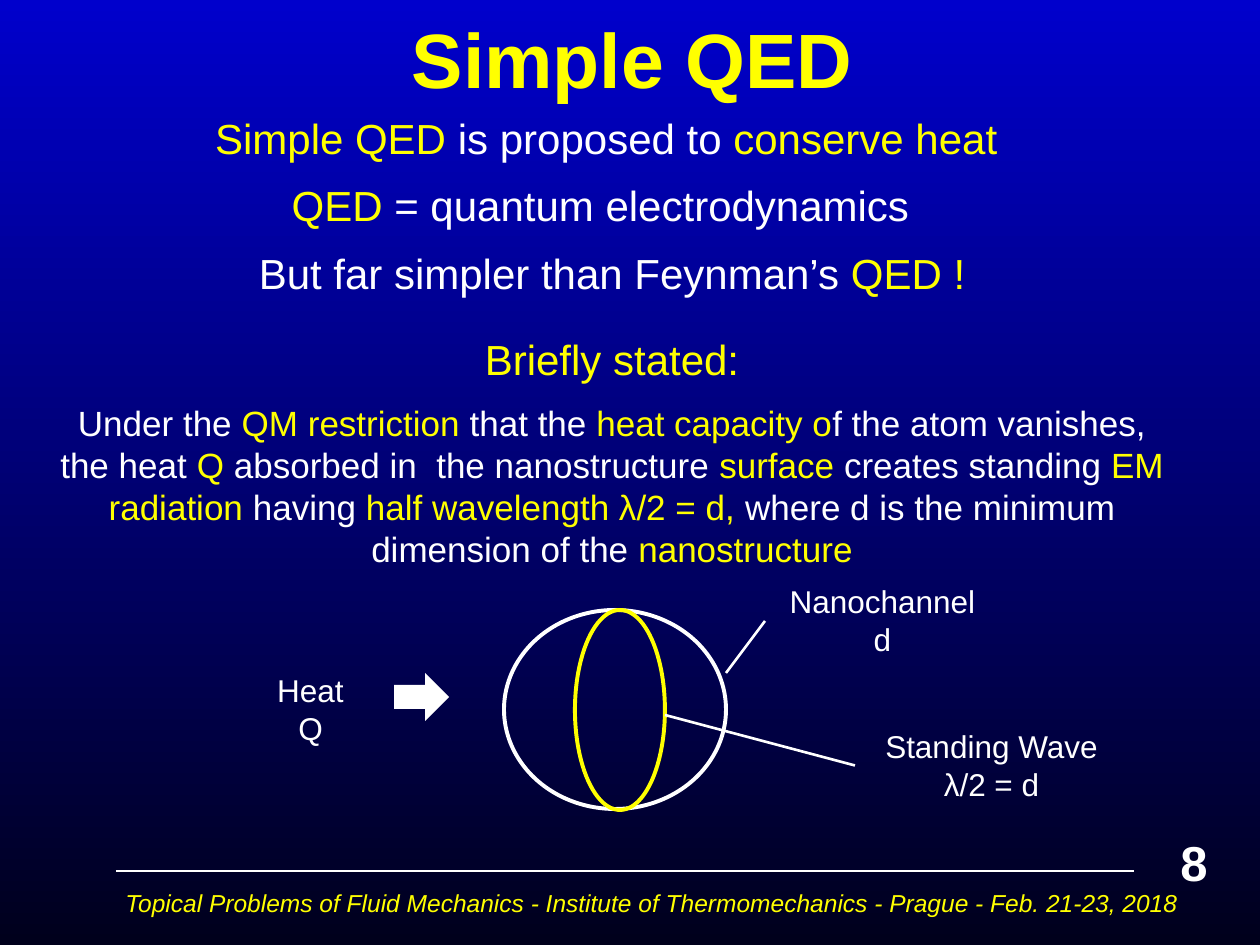
from typing import NamedTuple

import pptx
import pptx.dml.color
import pptx.enum.shapes
import pptx.enum.text
import pptx.oxml.ns
import pptx.util
from lxml import etree

PX_PER_INCH = 126
COLORS = {"white": "FFFFFF", "yellow": "FFFF00", "top": "0000CC", "bottom": "00001C"}
FONT = "Arial"
SHAPE = pptx.enum.shapes.MSO_SHAPE
ALIGN = pptx.enum.text.PP_ALIGN
ANCHOR = pptx.enum.text.MSO_ANCHOR


class Box(NamedTuple):
    left: int
    top: int
    width: int
    height: int


class Run(NamedTuple):
    text: str
    color: str = "white"


class Para(NamedTuple):
    runs: list[Run]
    size: int
    before: int = 0


class Label(NamedTuple):
    lines: list[str]
    box: Box


class Figure(NamedTuple):
    kind: SHAPE
    box: Box
    fill: str | None = None
    line: str | None = None


def px(n: int) -> pptx.util.Emu:
    return pptx.util.Emu(round(n * 914400 / PX_PER_INCH))


def rgb(name: str) -> pptx.dml.color.RGBColor:
    return pptx.dml.color.RGBColor.from_string(COLORS[name])


def add_text(s, paras: list[Para], box: Box, *, align=ALIGN.CENTER, anchor=ANCHOR.TOP,
             bold=False, italic=False, inset_top: int = 6):
    sp = s.shapes.add_textbox(*map(px, box))
    tf = sp.text_frame
    tf.word_wrap = True
    tf.vertical_anchor = anchor
    tf.margin_top = px(inset_top)
    for i, para in enumerate(paras):
        p = tf.paragraphs[0] if i == 0 else tf.add_paragraph()
        p.alignment = align
        p.space_before = pptx.util.Pt(para.before)
        for run in para.runs:
            r = p.add_run()
            r.text = run.text
            r.font.name = FONT
            r.font.size = pptx.util.Pt(para.size)
            r.font.bold, r.font.italic = bold, italic
            r.font.color.rgb = rgb(run.color)
    return sp


def add_figure(s, fig: Figure):
    sp = s.shapes.add_shape(fig.kind, *map(px, fig.box))
    sp.shadow.inherit = False
    if fig.fill:
        sp.fill.solid()
        sp.fill.fore_color.rgb = rgb(fig.fill)
    else:
        sp.fill.background()
    if fig.line:
        sp.line.color.rgb = rgb(fig.line)
        sp.line.width = pptx.util.Pt(2.25)
    else:
        sp.line.fill.background()
    return sp


def add_line(s, x1: int, y1: int, x2: int, y2: int, width: float):
    line = s.shapes.add_connector(pptx.enum.shapes.MSO_CONNECTOR.STRAIGHT,
                                  *map(px, (x1, y1, x2, y2)))
    line.line.color.rgb = rgb("white")
    line.line.width = pptx.util.Pt(width)
    etree.SubElement(line._element.spPr, pptx.oxml.ns.qn("a:effectLst"))
    return line


BODY = [
    Para([Run("Simple QED ", "yellow"), Run("is proposed to "),
          Run("conserve heat ", "yellow")], 24),
    Para([Run("QED ", "yellow"), Run("= quantum electrodynamics  ")], 24, 10),
    Para([Run("But far simpler than Feynman’s "), Run("QED !", "yellow")], 24, 10),
    Para([Run("Briefly stated:", "yellow")], 24, 20),
    Para([Run("Under the"), Run(" QM restriction ", "yellow"), Run("that the"),
          Run(" heat capacity o", "yellow"), Run("f the atom vanishes, the heat "),
          Run("Q", "yellow"), Run(" absorbed in  the nanostructure "),
          Run("surface ", "yellow"), Run("creates standing "),
          Run("EM radiation ", "yellow"), Run("having"),
          Run(" half wavelength λ/2 = d, ", "yellow"),
          Run("where d is the minimum dimension of the"),
          Run(" nanostructure", "yellow")], 20, 10),
]
FIGURES = [
    Figure(SHAPE.OVAL, Box(504, 610, 222, 199), line="white"),
    Figure(SHAPE.OVAL, Box(575, 610, 90, 200), line="yellow"),
    Figure(SHAPE.RIGHT_ARROW, Box(394, 673, 55, 48), fill="white"),
]
HEAT = Label(["Heat", "Q"], Box(263, 665, 95, 89))
WAVE = Label(["Standing Wave", "λ/2 = d"], Box(855, 721, 273, 89))
CHANNEL = Label(["Nanochannel", "d"], Box(746, 576, 273, 89))
FOOTER = ("Topical Problems of Fluid Mechanics - Institute of Thermomechanics"
          " - Prague - Feb. 21-23, 2018")


def add_label(s, label: Label):
    return add_text(s, [Para([Run(line)], 18) for line in label.lines], label.box)


def main() -> None:
    prs = pptx.Presentation()
    prs.slide_width, prs.slide_height = px(1260), px(945)
    s = prs.slides.add_slide(prs.slide_layouts[6])

    bg = s.background.fill
    bg.gradient()
    bg.gradient_angle = 270
    for stop, name in zip(bg.gradient_stops, ("top", "bottom")):
        stop.color.rgb = rgb(name)

    add_line(s, 116, 871, 1134, 871, 0.75)
    add_text(s, [Para([Run("Simple QED", "yellow")], 44)], Box(97, -21, 1071, 157),
             anchor=ANCHOR.MIDDLE, bold=True)
    add_text(s, [Para([Run(FOOTER, "yellow")], 14)], Box(113, 882, 1166, 53),
             align=ALIGN.LEFT, italic=True)
    add_text(s, [Para([Run("8")], 28)], Box(1168, 820, 92, 72),
             align=ALIGN.LEFT, bold=True, inset_top=12)
    add_text(s, BODY, Box(37, 88, 1150, 488), inset_top=24)

    for fig in FIGURES:
        add_figure(s, fig)
    add_label(s, HEAT)
    wave = add_label(s, WAVE)
    add_label(s, CHANNEL)
    add_line(s, 855, 765, 665, 715, 1.5).begin_connect(wave, 1)
    add_line(s, 765, 621, 726, 673, 1.5)

    prs.save("out.pptx")


if __name__ == "__main__":
    main()
